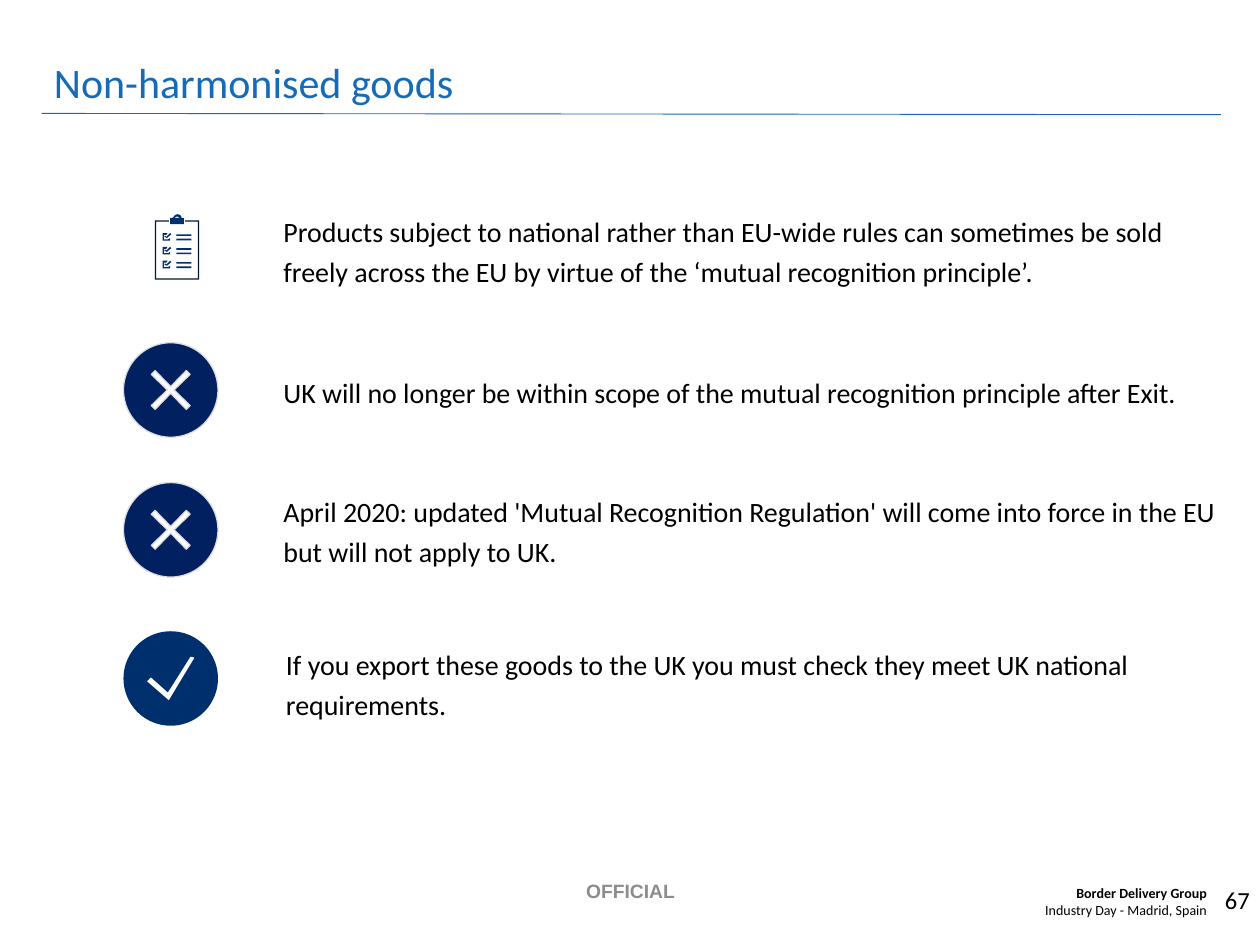
from pptx import Presentation
from pptx.dml.color import RGBColor
from pptx.enum.shapes import MSO_CONNECTOR as CONN, MSO_SHAPE as SHAPE
from pptx.enum.text import MSO_ANCHOR as ANCHOR, PP_ALIGN as ALIGN
from pptx.oxml.ns import qn
from pptx.util import Inches, Pt

COLS, ROWS = 100, 75
W, H = Inches(10), Inches(7.5)
BLUE, NAVY, DARK, INK = "166BB8", "002060", "002F6D", "001836"
WHITE, BLACK, GREY, PALE = "FFFFFF", "000000", "8C8C8C", "DDDDDD"

# Disc marks, as shares of the disc
OUT, MID, IN = 0.205, 0.165, 0.035
ARM = [(MID, -OUT), (IN, 0), (MID, OUT)]
CROSS = [(0.5 + x, 0.5 + y) for x, y in [
    (MID, -OUT), (0, -IN), (-MID, -OUT), (-OUT, -MID), (-IN, 0), (-OUT, MID),
    (-MID, OUT), (0, IN), (MID, OUT), (OUT, MID), (IN, 0), (OUT, -MID)]]
TICK = [(0.47, 0.65), (0.29, 0.49), (0.25, 0.53),
        (0.48, 0.73), (0.75, 0.28), (0.71, 0.27)]

# Clipboard parts, on a grid of 35 by 52
CLIP_GRID = (35, 52)
FRAME = [(0, 5), (11, 5), (11, 6), (1, 6), (1, 51), (34, 51), (34, 6),
         (24, 6), (24, 5), (35, 5), (35, 52), (0, 52)]
CLIP = [(12, 8), (12, 3), (14, 3), (15, 2), (16, 0.7), (18, 0),
        (20, 0.7), (21, 2), (21, 3), (23, 3), (23, 8)]
CLIP_HOLE = [(15, 3), (17, 2), (18, 2), (20, 3)]
SMALL_TICK = [(12, 0), (13, 1), (9.5, 4), (7.5, 3), (8, 2), (9, 3)]
CHECK_BOX = [(6, 0), (10, 0), (9, 1.5), (7, 1.5), (7, 5),
             (10.5, 5), (12, 4), (12, 6), (6, 6)]
ENTRY_LINES = [[(17, y), (29, y), (29, y + 1.3), (17, y + 1.3)]
               for y in (1, 4.5)]
ENTRY_TOPS = (15, 26, 37)

POINTS = [
    ("clipboard", (12.3, 17, 3.5, 5.2), (22.5, 15.8, 74.4, 7.8),
     "Products subject to national rather than EU-wide rules can sometimes "
     "be sold freely across the EU by virtue of the ‘mutual recognition "
     "principle’."),
    ("cross", (9.8, 27.2, 7.5, 7.5), (22.5, 27, 74.4, 7.8),
     "UK will no longer be within scope of the mutual recognition principle "
     "after Exit."),
    ("cross", (9.8, 38.3, 7.5, 7.5), (22.5, 38, 74.4, 7.8),
     "April 2020: updated 'Mutual Recognition Regulation' will come into "
     "force in the EU but will not apply to UK."),
    ("tick", (9.8, 50.1, 7.5, 7.5), (22.7, 50.6, 74.4, 6.9),
     "If you export these goods to the UK you must check they meet UK "
     "national requirements."),
]


def rgb(color):
    return RGBColor.from_string(color)


def cells(x, y, w, h):
    """Turn columns and rows into slide lengths."""
    return [round(v) for v in (x * W / COLS, y * H / ROWS,
                               w * W / COLS, h * H / ROWS)]


def paint(sp, fill, line=None):
    sp.shadow.inherit = False
    sp.fill.solid()
    sp.fill.fore_color.rgb = rgb(fill)
    if line:
        sp.line.color.rgb = rgb(line)
        sp.line.width = Pt(0.75)
    else:
        sp.line.fill.background()


def write(sp, *lines, size=16, color=BLACK, font="Calibri", bold=(False,),
          align=ALIGN.LEFT, anchor=ANCHOR.TOP, inset=True, wrap=True,
          spacing=None, after=None):
    tf = sp.text_frame
    tf.word_wrap, tf.vertical_anchor = wrap, anchor
    if not inset:
        tf.margin_left = tf.margin_right = tf.margin_top = tf.margin_bottom = 0
    for i, (text, is_bold) in enumerate(zip(lines, bold)):
        p = tf.add_paragraph() if i else tf.paragraphs[0]
        p.alignment, p.line_spacing, p.space_after = align, spacing, after
        r = p.add_run()
        r.text = text
        r.font.name, r.font.size, r.font.bold = font, Pt(size), is_bold
        r.font.color.rgb = rgb(color)


def add_text(slide, box, *lines, **style):
    write(slide.shapes.add_textbox(*cells(*box)), *lines, **style)


def add_outline(slide, box, contours, fill, line=None, grid=(1, 1)):
    """Draw closed contours given on a grid that spans the box."""
    x, y, w, h = cells(*box)
    paths = [[(round(x + px * w / grid[0]), round(y + py * h / grid[1]))
              for px, py in contour] for contour in contours]
    builder = slide.shapes.build_freeform(*paths[0][0], scale=1.0)
    for i, path in enumerate(paths):
        if i:
            builder.move_to(*path[0])
        builder.add_line_segments(path[1:], close=True)
    paint(builder.convert_to_shape(), fill, line)


def add_disc(slide, box, mark, fill, line=None):
    disc = slide.shapes.add_shape(SHAPE.OVAL, *cells(*box))
    paint(disc, fill, line)
    add_outline(slide, box, [mark], WHITE, line)


def add_clipboard(slide, box):
    entry = [SMALL_TICK, CHECK_BOX, *ENTRY_LINES]
    entries = [[(x, y + top) for x, y in part]
               for top in ENTRY_TOPS for part in entry]
    add_outline(slide, box, [FRAME], INK, grid=CLIP_GRID)
    add_outline(slide, box, [CLIP, CLIP_HOLE, *entries], DARK, grid=CLIP_GRID)


def add_heading(slide, box, text):
    add_text(slide, box, text, size=24, color=BLUE, anchor=ANCHOR.BOTTOM)
    x, y, w, h = cells(*box)
    rule = slide.shapes.add_connector(CONN.STRAIGHT, x, y + h,
                                      x + w, y + h + Inches(0.01))
    rule.line.color.rgb = rgb(BLUE)
    rule.line.width = Pt(0.5)
    props = rule._element.spPr
    props.append(props.makeelement(qn("a:effectLst"), {}))


def add_point(slide, icon, icon_box, text_box, text):
    if icon == "clipboard":
        add_clipboard(slide, icon_box)
    elif icon == "cross":
        add_disc(slide, icon_box, CROSS, NAVY, PALE)
    else:
        add_disc(slide, icon_box, TICK, DARK)
    add_text(slide, text_box, text, anchor=ANCHOR.MIDDLE, inset=False,
             spacing=1.2, after=Pt(6))


def add_footer(slide, mark_box, event_box, number_box):
    add_text(slide, mark_box, "OFFICIAL", size=11, color=GREY, font="Arial",
             bold=(True,), align=ALIGN.CENTER)
    add_text(slide, event_box, "Border Delivery Group",
             "Industry Day - Madrid, Spain", size=8, bold=(True, False),
             align=ALIGN.RIGHT)
    # Page number
    sp = slide.shapes.add_shape(SHAPE.ROUNDED_RECTANGLE, *cells(*number_box))
    sp.adjustments[0] = 0
    paint(sp, WHITE)
    write(sp, "67", size=14, align=ALIGN.RIGHT, anchor=ANCHOR.MIDDLE,
          inset=False, wrap=False)


def main():
    prs = Presentation()
    prs.slide_width, prs.slide_height = W, H
    slide = prs.slides.add_slide(prs.slide_layouts[6])
    add_heading(slide, (3.3, 1.5, 93.6, 7.5), "Non-harmonised goods")
    for point in POINTS:
        add_point(slide, *point)
    add_footer(slide, (34, 69.3, 32.1, 4), (79.2, 69.7, 17.6, 3.7),
               (96.9, 70.2, 2.3, 2.4))
    prs.save("out.pptx")


if __name__ == "__main__":
    main()
